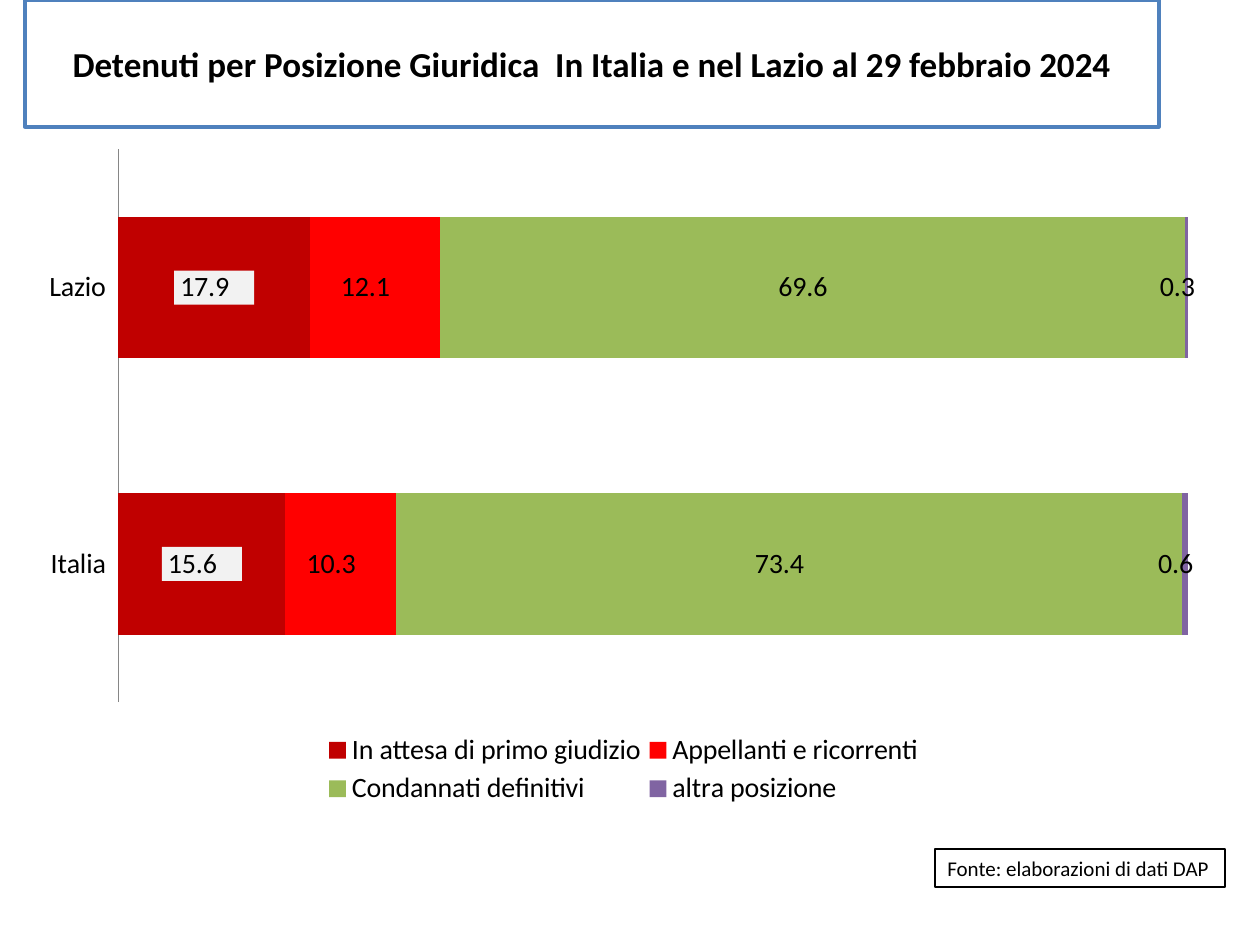
from lxml import etree
from pptx import Presentation
from pptx.chart.data import CategoryChartData
from pptx.dml.color import RGBColor
from pptx.enum.chart import XL_CHART_TYPE, XL_LEGEND_POSITION, XL_TICK_LABEL_POSITION, XL_TICK_MARK
from pptx.enum.shapes import MSO_SHAPE
from pptx.enum.text import MSO_ANCHOR, PP_ALIGN
from pptx.oxml import parse_xml
from pptx.oxml.ns import nsdecls, qn
from pptx.util import Pt

SCALE = 914400 / 126
BARS = XL_CHART_TYPE.BAR_STACKED_100
BOTTOM = XL_LEGEND_POSITION.BOTTOM
LOW = XL_TICK_LABEL_POSITION.LOW
NO_TICK = XL_TICK_MARK.NONE
RECT = MSO_SHAPE.RECTANGLE
MIDDLE = MSO_ANCHOR.MIDDLE
LEFT, CENTER = PP_ALIGN.LEFT, PP_ALIGN.CENTER
FONT = "Calibri"
NUMBER = r'_-* #,##0.0\ _€_-;\-* #,##0.0\ _€_-;_-* "-"??\ _€_-;_-@_-'
SERIES = [
    ("In attesa di primo giudizio", (17.9, 15.6), "C00000"),
    ("Appellanti e ricorrenti", (12.1, 10.3), "FF0000"),
    ("Condannati definitivi", (69.6, 73.4), "9BBB59"),
    ("altra posizione", (0.3, 0.6), "8064A2"),
]


def px(*sizes):
    """Turn px lengths into EMU."""
    return [round(size * SCALE) for size in sizes]


def color(code):
    """Turn a hex string into a colour."""
    return RGBColor.from_string(code)


def style(item, values):
    """Set each attribute in a dict of format values."""
    for name, value in values.items():
        setattr(item, name, value)


def paint(fill, code):
    """Make a fill solid in one colour."""
    fill.solid()
    fill.fore_color.rgb = color(code)


def ink(font, size, bold=False):
    """Give a font its face, size and black colour."""
    style(font, {"name": FONT, "size": Pt(size), "bold": bold})
    font.color.rgb = color("000000")


def panel(slide, box, text, size, edge, width, bold=False, align=LEFT, wrap=True):
    """Draw a white framed box with one line of text."""
    shape = slide.shapes.add_shape(RECT, *px(*box))
    shape.shadow.inherit = False
    paint(shape.fill, "FFFFFF")
    shape.line.color.rgb = color(edge)
    shape.line.width = Pt(width)
    frame = shape.text_frame
    style(frame, {"word_wrap": wrap, "vertical_anchor": MIDDLE})
    line = frame.paragraphs[0]
    style(line, {"text": text, "alignment": align})
    ink(line.font, size, bold)


def layout(node, box, inner=False):
    """Fix the place of a chart part by fractions of the chart."""
    for old in node.findall(qn("c:layout")):
        node.remove(old)
    target = '<c:layoutTarget val="inner"/>' if inner else ""
    modes = "".join(f'<c:{side}Mode val="edge"/>' for side in "xy")
    sizes = "".join(f'<c:{side} val="{part}"/>' for side, part in zip("xywh", box))
    part = parse_xml(f'<c:layout {nsdecls("c")}><c:manualLayout>{target}{modes}{sizes}'
                     '</c:manualLayout></c:layout>')
    if inner:
        node.insert(0, part)
    else:
        node.find(qn("c:legendPos")).addnext(part)


def back(labels, code):
    """Put a solid colour behind data labels."""
    shape = parse_xml(f'<c:spPr {nsdecls("c", "a")}/>')
    fill = etree.SubElement(shape, qn("a:solidFill"))
    etree.SubElement(fill, qn("a:srgbClr"), val=code)
    labels._element.find(qn("c:numFmt")).addnext(shape)


def bars(slide, box):
    """Draw the stacked bars with labels and legend."""
    data = CategoryChartData(number_format=NUMBER)
    data.categories = ["Lazio", "Italia"]
    for name, values, _ in SERIES:
        data.add_series(name, values)
    chart = slide.shapes.add_chart(BARS, *px(*box), data).chart
    style(chart, {"has_title": False, "has_legend": True})
    ink(chart.font, 16)
    style(chart.legend, {"position": BOTTOM, "include_in_layout": False})
    axis = chart.category_axis
    style(axis, {"reverse_order": True, "major_tick_mark": NO_TICK,
                 "minor_tick_mark": NO_TICK, "tick_label_position": LOW})
    axis.format.line.color.rgb = color("868686")
    style(chart.value_axis, {"visible": False, "has_major_gridlines": False})
    plot = chart.plots[0]
    style(plot, {"gap_width": 95, "overlap": 100, "vary_by_categories": False})
    for series, (_, _, code) in zip(plot.series, SERIES):
        paint(series.format.fill, code)
        labels = series.data_labels
        style(labels, {"show_value": True, "number_format": NUMBER,
                       "number_format_is_linked": False})
        ink(labels.font, 16)
    back(plot.series[0].data_labels, "F2F2F2")
    layout(chart._chartSpace.chart.plotArea, (0.07, 0.02, 0.9, 0.82), True)
    layout(chart.legend._element, (0.24, 0.88, 0.51, 0.12))


def main():
    """Build and save the slide."""
    deck = Presentation()
    wide, high = px(1260, 945)
    style(deck, {"slide_width": wide, "slide_height": high})
    slide = deck.slides.add_slide(deck.slide_layouts[6])
    panel(slide, (25, 0, 1134, 127),
          "Detenuti per Posizione Giuridica  In Italia e nel Lazio al 29 febbraio 2024",
          20, "4F81BD", 2, bold=True, align=CENTER)
    panel(slide, (935, 849, 290, 38), "Fonte: elaborazioni di dati DAP",
          12, "000000", 0.75, wrap=False)
    bars(slide, (35, 136, 1189, 674))
    deck.save("out.pptx")


if __name__ == "__main__":
    main()
